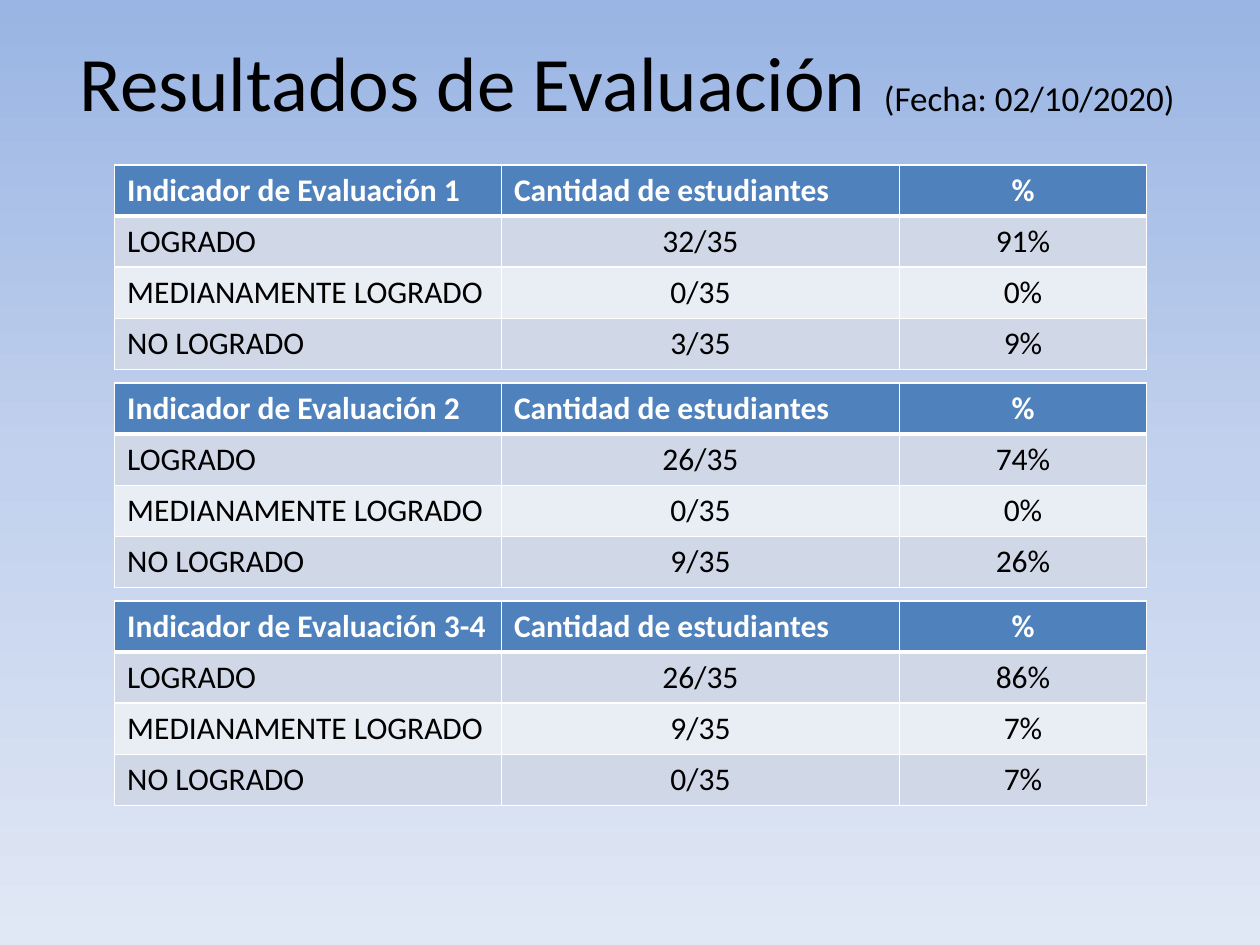
from dataclasses import dataclass

from lxml import etree
from pptx import Presentation
from pptx import util as u
from pptx.dml.color import RGBColor
from pptx.enum import text
from pptx.oxml.ns import qn

FONT = "Calibri"
WHITE, BLACK = "FFFFFF", "000000"
HEADER_FILL, BANDS = "4F81BD", ("D0D8E8", "E9EDF4")
BACKGROUND_STOPS = ((0, "9AB5E4"), (50, "C2D1ED"), (100, "E1E8F5"))

SLIDE_WIDTH, SLIDE_HEIGHT = u.Inches(10), u.Inches(7.5)
TABLE_LEFT, TABLE_TOP = u.Inches(0.91), u.Inches(1.31)
COLUMN_WIDTHS = [u.Inches(width) for width in (3.07, 3.16, 1.96)]
ROW_HEIGHT = SLIDE_HEIGHT * 0.054
TABLE_PITCH = u.Inches(1.73)
LEVELS = ("LOGRADO", "MEDIANAMENTE LOGRADO", "NO LOGRADO")


@dataclass
class Indicator:
    number: str
    counts: tuple[int, ...]
    percentages: tuple[int, ...]

    def rows(self) -> list[tuple[str, str, str]]:
        header = (f"Indicador de Evaluación {self.number}", "Cantidad de estudiantes", "%")
        results = zip(LEVELS, self.counts, self.percentages)
        return [header] + [(level, f"{count}/35", f"{share}%") for level, count, share in results]


INDICATORS = (
    Indicator("1", (32, 0, 3), (91, 0, 9)),
    Indicator("2", (26, 0, 9), (74, 0, 26)),
    Indicator("3-4", (26, 9, 0), (86, 7, 7)),
)


def color(hex_value: str) -> RGBColor:
    return RGBColor.from_string(hex_value)


def format_run(run, size: float, hex_value: str, bold: bool = False) -> None:
    run.font.name, run.font.size, run.font.bold = FONT, u.Pt(size), bold
    run.font.color.rgb = color(hex_value)


def add_color(parent, hex_value: str) -> None:
    etree.SubElement(parent, qn("a:srgbClr"), val=hex_value)


def paint_background(slide) -> None:
    fill = slide.background.fill
    fill.gradient()
    fill.gradient_angle = 270
    stops = slide.element.find(".//" + qn("a:gsLst"))
    for stop in list(stops):
        stops.remove(stop)
    for percent, hex_value in BACKGROUND_STOPS:
        add_color(etree.SubElement(stops, qn("a:gs"), pos=str(percent * 1000)), hex_value)


def add_title(slide) -> None:
    title = slide.shapes.title
    title.left, title.top = u.Inches(0.51), u.Inches(0.13)
    title.width, title.height = u.Inches(9), u.Inches(1.02)
    frame = title.text_frame
    frame.word_wrap = True
    frame.vertical_anchor = text.MSO_ANCHOR.MIDDLE
    paragraph = frame.paragraphs[0]
    paragraph.alignment = text.PP_ALIGN.CENTER
    for words, size in (("Resultados de Evaluación ", 44), ("(Fecha: 02/10/2020) ", 20)):
        run = paragraph.add_run()
        run.text = words
        format_run(run, size, BLACK)


def set_borders(cell, row: int) -> None:
    """Draw thin white borders, with a thick one under the header row."""
    thick_side = {0: "lnB", 1: "lnT"}.get(row)
    properties = cell._tc.get_or_add_tcPr()
    for side in ("lnL", "lnR", "lnT", "lnB"):
        width = u.Pt(3 if side == thick_side else 1)
        line = etree.SubElement(properties, qn(f"a:{side}"), w=str(width))
        add_color(etree.SubElement(line, qn("a:solidFill")), WHITE)


def format_cell(cell, row: int, column: int, words: str) -> None:
    is_header = row == 0
    set_borders(cell, row)
    cell.fill.solid()
    cell.fill.fore_color.rgb = color(HEADER_FILL if is_header else BANDS[(row - 1) % 2])
    cell.text_frame.text = words
    paragraph = cell.text_frame.paragraphs[0]
    if column == 2 or (column == 1 and not is_header):
        paragraph.alignment = text.PP_ALIGN.CENTER
    format_run(paragraph.runs[0], 18, WHITE if is_header else BLACK, is_header)


def add_indicator_table(slide, indicator: Indicator, position: int) -> None:
    rows = indicator.rows()
    table = slide.shapes.add_table(
        len(rows), len(COLUMN_WIDTHS), TABLE_LEFT, TABLE_TOP + position * TABLE_PITCH,
        sum(COLUMN_WIDTHS), int(ROW_HEIGHT * len(rows)),
    ).table
    for column, width in zip(table.columns, COLUMN_WIDTHS):
        column.width = width
    for row, values in enumerate(rows):
        for column, words in enumerate(values):
            format_cell(table.cell(row, column), row, column, words)


def main() -> None:
    presentation = Presentation()
    presentation.slide_width, presentation.slide_height = SLIDE_WIDTH, SLIDE_HEIGHT
    slide = presentation.slides.add_slide(presentation.slide_layouts.get_by_name("Title Only"))
    paint_background(slide)
    add_title(slide)
    for position, indicator in enumerate(INDICATORS):
        add_indicator_table(slide, indicator, position)
    presentation.save("out.pptx")


if __name__ == "__main__":
    main()
